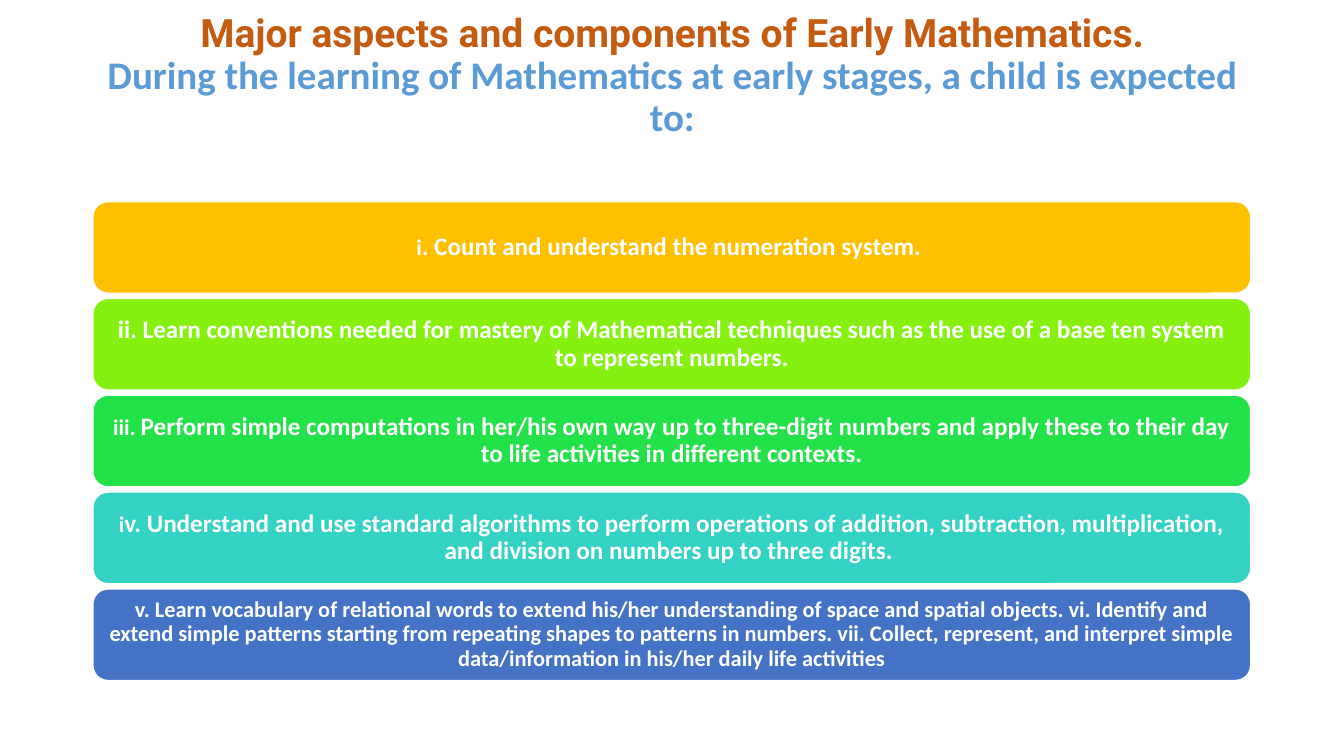
import pptx
import pptx.dml.color
import pptx.enum.shapes
import pptx.enum.text
import pptx.util

Cm, Pt = pptx.util.Cm, pptx.util.Pt
COLORS = {
    "heading": "C55A11", "lead": "5B9BD5", "white": "FFFFFF",
    "amber": "FFC000", "lime": "86F011", "green": "23E148",
    "teal": "33D2C5", "blue": "4472C4",
}


def color(name):
    return pptx.dml.color.RGBColor.from_string(COLORS[name])


def add_span(para, text, size, font, color_name):
    span = para.add_run()
    span.text = text
    span.font.size = Pt(size)
    span.font.name = font
    span.font.bold = True
    span.font.color.rgb = color(color_name)


deck = pptx.Presentation()
deck.slide_width, deck.slide_height = Cm(33.87), Cm(19.05)
page = deck.slides.add_slide(deck.slide_layouts[5])

# Title: the deep bottom margin lifts the text above the bars
title = page.shapes.title
title.left, title.top, title.width, title.height = Cm(2.34), Cm(1.14), Cm(29.21), Cm(3.3)
frame = title.text_frame
frame.word_wrap = True
frame.auto_size = pptx.enum.text.MSO_AUTO_SIZE.NONE
frame.vertical_anchor = pptx.enum.text.MSO_ANCHOR.MIDDLE
frame.margin_top, frame.margin_bottom = Cm(0.13), Cm(1.83)
para = frame.paragraphs[0]
para.alignment = pptx.enum.text.PP_ALIGN.CENTER
para.line_spacing = 0.9
add_span(para, "Major aspects and components of Early Mathematics.", 27.9, "Roboto", "heading")
para.add_line_break()
add_span(para, "During the learning of Mathematics at early stages, a child is expected to:",
         27.9, "Calibri", "lead")

# Stacked bars: fill, then (text, size) spans
bars = [
    ("amber", [("i", 16), (". Count and understand the numeration system. ", 18)]),
    ("lime", [("ii. Learn conventions needed for mastery of Mathematical techniques such as "
               "the use of a base ten system to represent numbers.", 18)]),
    ("green", [("iii. ", 16),
               ("Perform simple computations in her/his own way up to three-digit numbers and "
                "apply these to their day to life activities in different contexts.", 18)]),
    ("teal", [("i", 16),
              ("v. Understand and use standard algorithms to perform operations of addition, "
               "subtraction, multiplication, and division on numbers up to three digits. ", 18)]),
    ("blue", [("v. Learn vocabulary of relational words to extend his/her understanding of space "
               "and spatial objects. vi. Identify and extend simple patterns starting from "
               "repeating shapes to patterns in numbers. vii. Collect, represent, and interpret "
               "simple data/information in his/her daily life activities", 16)]),
]
for index, (fill, spans) in enumerate(bars):
    bar = page.shapes.add_shape(
        pptx.enum.shapes.MSO_SHAPE.ROUNDED_RECTANGLE,
        Cm(2.34), Cm(5.08 + 2.44 * index), Cm(29.18), Cm(2.31))
    bar.shadow.inherit = False
    bar.fill.solid()
    bar.fill.fore_color.rgb = color(fill)
    bar.line.color.rgb = color("white")
    bar.line.width = Pt(1)
    frame = bar.text_frame
    frame.word_wrap = True
    frame.vertical_anchor = pptx.enum.text.MSO_ANCHOR.MIDDLE
    frame.margin_left = frame.margin_right = Cm(0.18)
    frame.margin_top = frame.margin_bottom = Cm(0.08)
    para = frame.paragraphs[0]
    para.alignment = pptx.enum.text.PP_ALIGN.CENTER
    para.line_spacing = 0.9
    for text, size in spans:
        add_span(para, text, size, "Calibri", "white")

deck.save("out.pptx")
